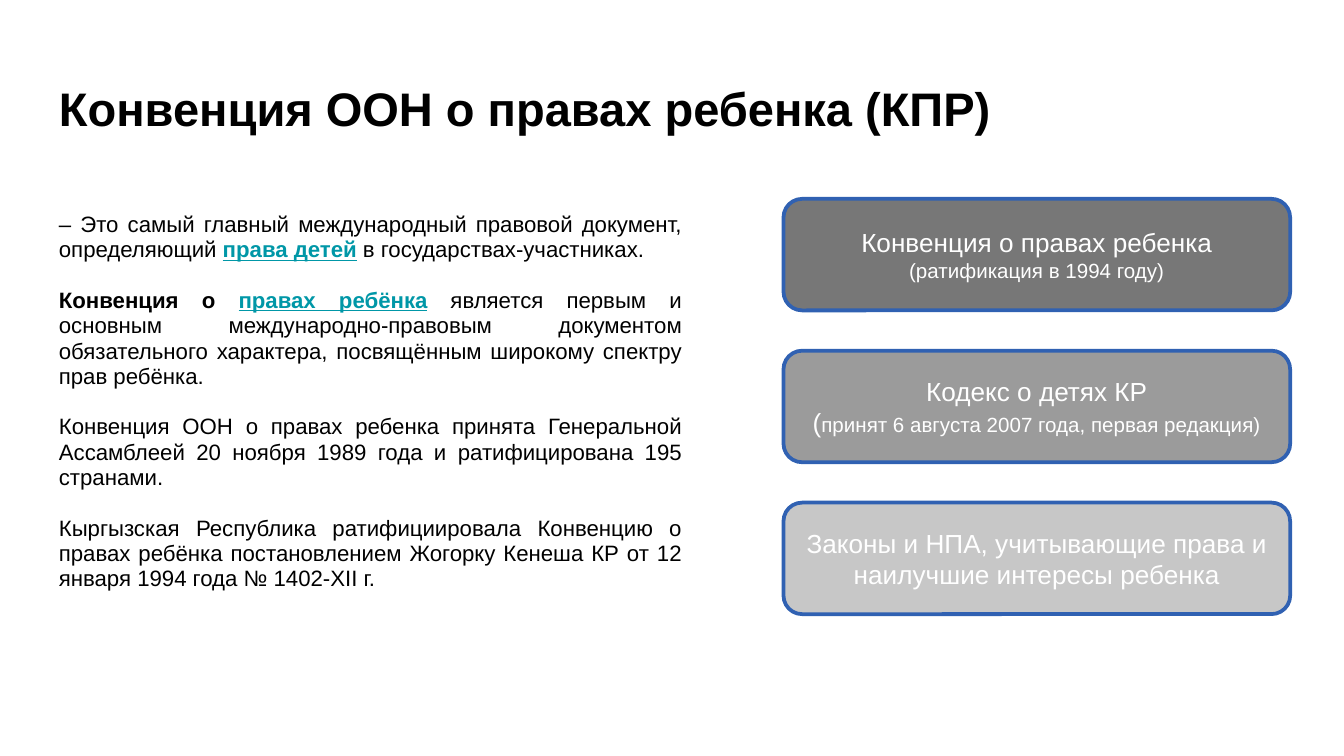
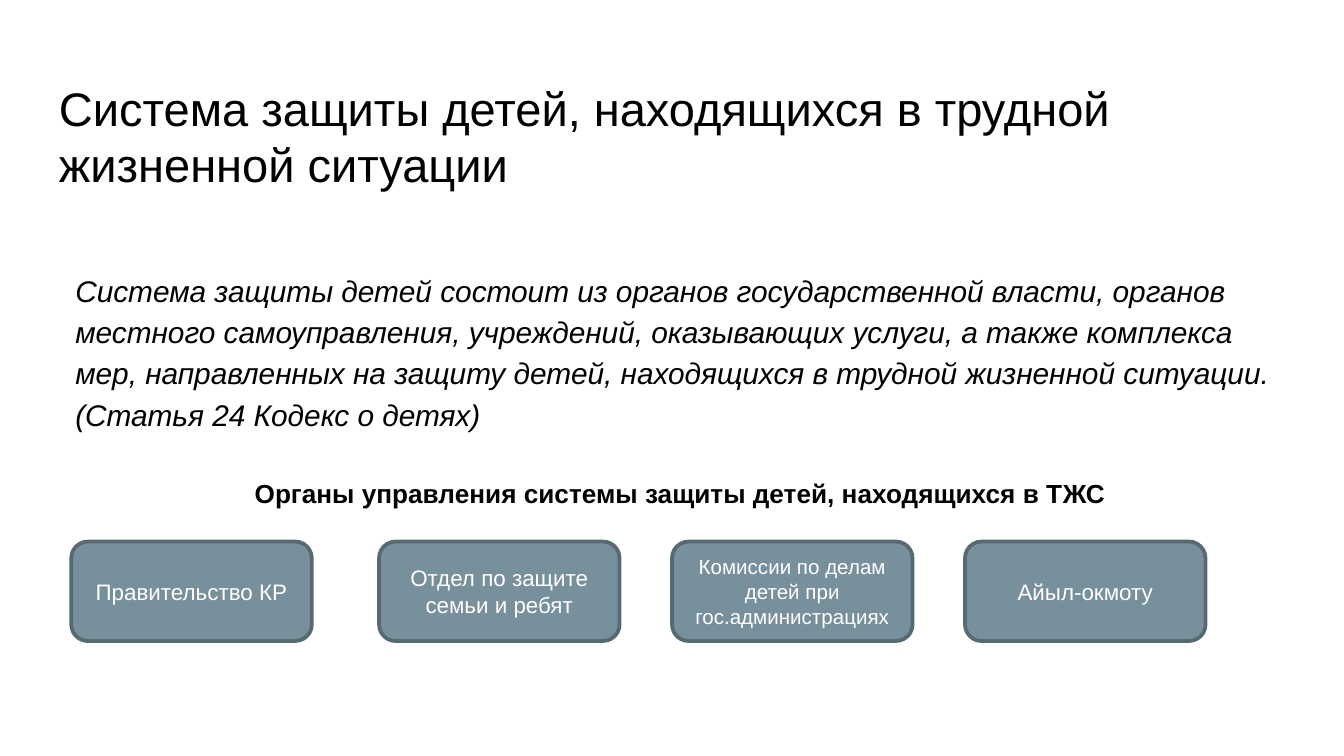
"""Build two slides on the rights of the child and the child protection system."""
from dataclasses import dataclass

from pptx import Presentation
from pptx import util as u
from pptx.dml.color import RGBColor
from pptx.enum import shapes, text

PX = 4572
SLIDE_SIZE = (2000, 1125)
LEFT = 68
CONTENT_WIDTH = 1864


@dataclass(frozen=True)
class Theme:
    """Colours, font and type sizes."""
    font: str = "Arial"
    ink: str = "000000"
    white: str = "FFFFFF"
    link: str = "0097A7"
    law_fills: tuple = ("777777", "9B9B9B", "C7C7C7")
    law_line: str = "3061B2"
    body_fill: str = "78909C"
    body_line: str = "576971"
    title: float = 25.2
    lead: int = 16
    heading: int = 14
    label: int = 12
    article: float = 11.9
    note: int = 11
    line: int = 2


class Deck:
    """Holds the style and the current slide."""

    def __init__(self, theme):
        """Start an empty presentation."""
        self.theme = theme
        self.presentation = Presentation()
        self.presentation.slide_width, self.presentation.slide_height = (n * PX for n in SLIDE_SIZE)
        self.slide = None

    def add_slide(self, title, bold=False):
        """Add a blank slide with its title."""
        self.slide = self.presentation.slides.add_slide(self.presentation.slide_layouts[6])
        frame = self.text_box(LEFT, 98, CONTENT_WIDTH, 126)
        self.paragraph(frame, [title], self.theme.title, bold=bold)

    def frame(self, shape, horizontal, vertical):
        """Prepare the text frame of a shape."""
        frame = shape.text_frame
        frame.word_wrap = True
        frame.margin_left = frame.margin_right = horizontal * PX
        frame.margin_top = frame.margin_bottom = vertical * PX
        return frame

    def text_box(self, *box):
        """Add an empty text box and return its frame."""
        return self.frame(self.slide.shapes.add_textbox(*(n * PX for n in box)), 20, 20)

    def paragraph(self, frame, parts, size, color=None, bold=False, italic=False,
                  align=text.PP_ALIGN.LEFT, spacing=None, before=None):
        """Add a paragraph of strings or (string, font settings) pairs."""
        paragraph = frame.paragraphs[0]
        if paragraph.runs:
            paragraph = frame.add_paragraph()
            if before:
                paragraph.space_before = u.Pt(before)
        paragraph.alignment = align
        if spacing:
            paragraph.line_spacing = spacing
        font = paragraph.font
        font.name, font.size = self.theme.font, u.Pt(size)
        font.bold, font.italic = bold, italic
        font.color.rgb = RGBColor.from_string(color or self.theme.ink)
        for part in parts:
            words, settings = (part, {}) if isinstance(part, str) else part
            run = paragraph.add_run()
            run.text = words
            for name, value in settings.items():
                if name == "color":
                    run.font.color.rgb = RGBColor.from_string(value)
                else:
                    setattr(run.font, name, value)

    def card(self, box, fill, line, lines):
        """Add a rounded card with centred lines of (parts, size)."""
        shape = self.slide.shapes.add_shape(
            shapes.MSO_SHAPE.ROUNDED_RECTANGLE, *(n * PX for n in box))
        shape.shadow.inherit = False
        shape.fill.solid()
        shape.fill.fore_color.rgb = RGBColor.from_string(fill)
        shape.line.color.rgb = RGBColor.from_string(line)
        shape.line.width = u.Pt(self.theme.line)
        frame = self.frame(shape, 20, 10)
        frame.vertical_anchor = text.MSO_ANCHOR.MIDDLE
        for parts, size in lines:
            self.paragraph(frame, parts, size, self.theme.white, align=text.PP_ALIGN.CENTER)


def convention_slide(deck):
    """Describe the convention and the laws that follow from it."""
    theme = deck.theme
    deck.add_slide("Конвенция ООН о правах ребенка (КПР)", bold=True)
    link = {"color": theme.link, "bold": True, "underline": True}
    articles = [
        ["– Это самый главный международный правовой документ, определяющий ",
         ("права детей", link), " в государствах-участниках."],
        [("Конвенция о ", {"bold": True}), ("правах ребёнка", link),
         " является первым и основным международно-правовым документом обязательного "
         "характера, посвящённым широкому спектру прав ребёнка."],
        ["Конвенция ООН о правах ребенка принята Генеральной Ассамблеей 20 ноября 1989 года "
         "и ратифицирована 195 странами."],
        ["Кыргызская Республика ратифициировала Конвенцию о правах ребёнка постановлением "
         "Жогорку Кенеша КР от 12 января 1994 года № 1402-XII г."],
    ]
    frame = deck.text_box(LEFT, 296, 966, 666)
    for parts in articles:
        deck.paragraph(frame, parts, theme.article, align=text.PP_ALIGN.JUSTIFY,
                       spacing=0.95, before=13.5)
    laws = [
        [(["Конвенция о правах ребенка"], theme.heading),
         (["(ратификация в 1994 году)"], theme.note)],
        [(["Кодекс о детях КР"], theme.heading),
         (["(", ("принят 6 августа 2007 года, первая редакция)", {"size": u.Pt(theme.note)})],
          theme.heading)],
        [(["Законы и НПА, учитывающие права и наилучшие интересы ребенка"], theme.heading)],
    ]
    for row, (lines, fill) in enumerate(zip(laws, theme.law_fills)):
        deck.card((1166, 296 + row * 226, 754, 166), fill, theme.law_line, lines)


def protection_slide(deck):
    """Describe the protection system and its governing bodies."""
    theme = deck.theme
    deck.add_slide("Система защиты детей, находящихся в трудной жизненной ситуации")
    frame = deck.text_box(LEFT, 378, CONTENT_WIDTH, 747)
    frame.margin_left = 44 * PX
    deck.paragraph(
        frame,
        ["Система защиты детей состоит из органов государственной власти, органов местного "
         "самоуправления, учреждений, оказывающих услуги, а также комплекса мер, направленных "
         "на защиту детей, находящихся в трудной жизненной ситуации. (Статья 24 Кодекс о детях)"],
        theme.lead, italic=True, spacing=1.15)
    deck.paragraph(frame, ["Органы управления системы защиты детей, находящихся в ТЖС"],
                   theme.heading, bold=True, align=text.PP_ALIGN.CENTER, spacing=1.15, before=22)
    bodies = [
        (106, "Правительство КР", theme.label),
        (564, "Отдел по защите семьи и ребят", theme.label),
        (1000, "Комиссии по делам детей при гос.администрациях", theme.note),
        (1436, "Айыл-окмоту", theme.label),
    ]
    for left, name, size in bodies:
        deck.card((left, 806, 358, 148), theme.body_fill, theme.body_line, [([name], size)])


def main():
    """Build and save the slides."""
    deck = Deck(Theme())
    convention_slide(deck)
    protection_slide(deck)
    deck.presentation.save("out.pptx")


if __name__ == "__main__":
    main()
